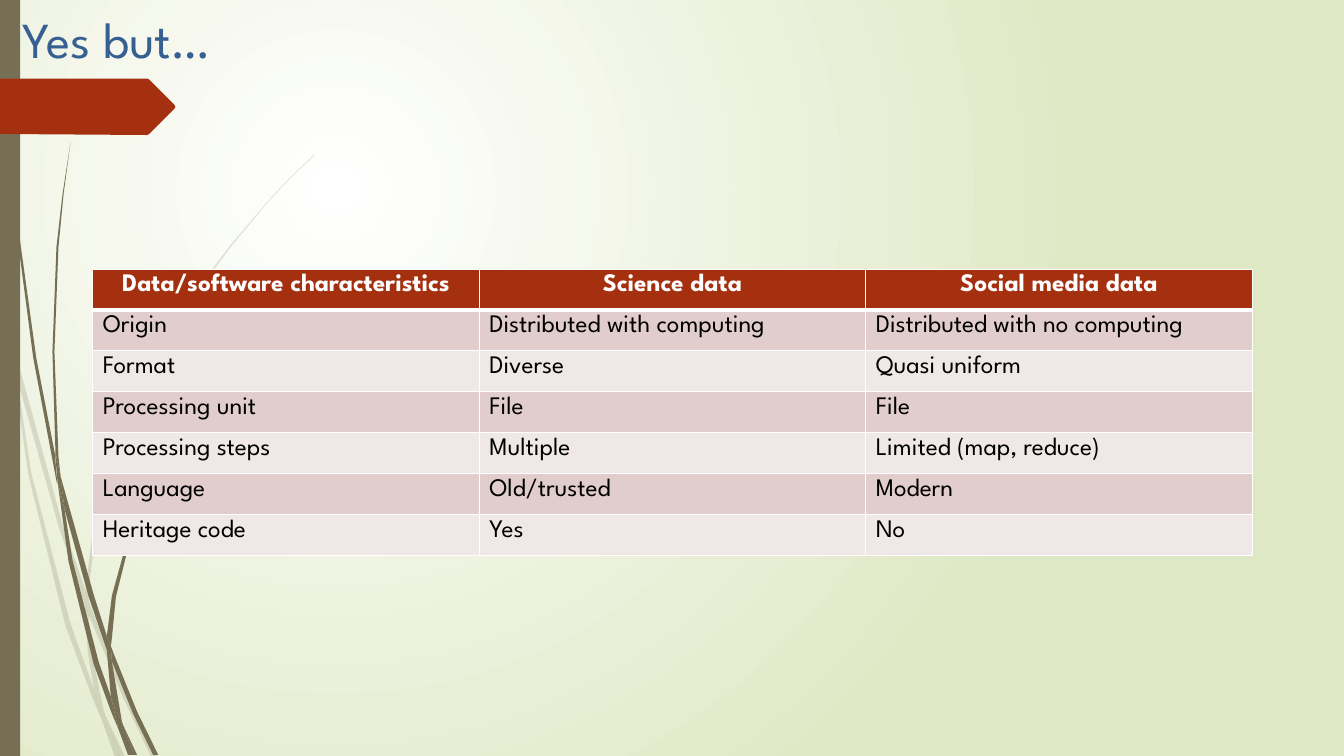
from lxml import etree
from pptx import Presentation
from pptx.dml.color import RGBColor
from pptx.enum.shapes import MSO_SHAPE
from pptx.enum.text import MSO_ANCHOR, PP_ALIGN
from pptx.oxml.ns import qn
from pptx.util import Inches, Pt

RECTANGLE = MSO_SHAPE.RECTANGLE
LEFT, CENTER = PP_ALIGN.LEFT, PP_ALIGN.CENTER
TOP, MIDDLE = MSO_ANCHOR.TOP, MSO_ANCHOR.MIDDLE

WHITE = RGBColor(0xFF, 0xFF, 0xFF)
BLACK = RGBColor(0x00, 0x00, 0x00)
PALE_GREEN = RGBColor(0xDF, 0xE8, 0xC4)
OLIVE = RGBColor(0x76, 0x6F, 0x54)
RUST = RGBColor(0xA5, 0x30, 0x10)
BLUE = RGBColor(0x37, 0x60, 0x92)
ROW_DARK = RGBColor(0xE1, 0xCD, 0xCC)
ROW_LIGHT = RGBColor(0xF0, 0xE8, 0xE7)

# Outlines of the grass blades, in inches
FAINT_BLADES = [
    [(0.11, 3.5), (0.09, 3.22), (0, 2.82), (0, 2.99), (0.1, 3.44)],
    [(0.58, 5.22), (0.84, 5.99), (0.85, 5.86), (0.62, 5.2), (0.14, 3.45),
     (0.17, 3.76)],
    [(0.92, 6.07), (0.88, 5.96), (0.88, 6.1), (1.23, 6.94), (1.5, 7.51),
     (1.55, 7.51), (1.27, 6.92)],
    [(1.19, 7.51), (1.24, 7.51), (1.05, 7.11)],
    [(0.93, 6.83), (0.7, 6.19), (0.31, 4.69), (0.17, 3.76), (0.11, 3.5),
     (0.28, 4.7), (0.65, 6.21), (0.92, 6.93), (1.01, 7.14), (0.99, 7.07)],
    [(0.84, 5.99), (0.87, 6.46), (0.93, 6.83), (0.96, 6.92), (1.05, 7.11),
     (1.03, 7.06), (0.91, 6.46), (0.88, 6.1), (0.88, 6.08)],
    [(0.88, 5.84), (0.96, 5.2), (1.1, 4.62), (1.33, 4.03), (1.6, 3.49),
     (1.92, 2.95), (2.29, 2.45), (2.68, 1.98), (2.9, 1.75), (3.12, 1.54),
     (3.12, 1.53), (2.89, 1.75), (2.68, 1.97), (2.28, 2.44), (1.9, 2.94),
     (1.58, 3.48), (1.3, 4.02), (1.07, 4.61), (0.93, 5.2), (0.85, 5.84),
     (0.85, 5.86), (0.88, 5.96)],
    [(1.01, 7.14), (1.14, 7.51), (1.19, 7.51)],
    [(0.88, 6.08), (0.88, 6.1), (0.88, 5.96), (0.85, 5.86), (0.84, 5.99)],
    [(0.96, 6.92), (0.93, 6.83), (0.99, 7.07), (1.01, 7.14), (1.19, 7.51),
     (1.05, 7.11)],
]
SOLID_BLADES = [
    [(0.07, 1.1), (0.17, 2.33), (0.33, 3.55), (0.56, 4.77), (0.57, 4.81),
     (0.55, 4.57), (0.55, 4.53), (0.36, 3.55), (0.19, 2.32), (0.08, 1.09),
     (0.05, 0.48), (0.04, 0), (0.03, 0), (0.04, 0.48)],
    [(0.88, 5.92), (1.06, 6.45), (1.06, 6.33), (1.06, 6.31), (0.93, 5.9),
     (0.6, 4.72), (0.64, 5.05)],
    [(1.13, 6.49), (1.1, 6.41), (1.11, 6.56), (1.32, 7.08), (1.52, 7.49),
     (1.57, 7.49), (1.36, 7.06)],
    [(1.1, 6.91), (0.98, 6.57), (0.72, 5.56), (0.64, 5.05), (0.57, 4.77),
     (0.68, 5.57), (0.93, 6.59), (1.11, 7.08), (1.17, 7.22), (1.16, 7.17)],
    [(0.6, 4.72), (0.58, 4.53), (0.54, 3.49), (0.58, 2.45), (0.63, 1.93),
     (0.7, 1.41), (0.62, 1.93), (0.56, 2.45), (0.52, 3.49), (0.55, 4.49)],
    [(1.33, 7.49), (1.36, 7.49), (1.22, 7.19)],
    [(0.57, 4.77), (0.64, 5.05), (0.6, 4.72), (0.55, 4.49), (0.55, 4.53)],
    [(1.11, 6.33), (1.15, 5.92), (1.25, 5.52), (1.4, 5.13), (1.58, 4.76),
     (1.8, 4.4), (2.05, 4.06), (2.31, 3.74), (2.45, 3.59), (2.61, 3.44),
     (2.6, 3.44), (2.45, 3.58), (2.31, 3.73), (2.04, 4.05), (1.78, 4.39),
     (1.56, 4.74), (1.37, 5.12), (1.22, 5.51), (1.11, 5.91), (1.06, 6.31),
     (1.1, 6.41)],
    [(1.17, 7.22), (1.27, 7.49), (1.31, 7.49)],
    [(1.06, 6.45), (1.1, 6.91), (1.16, 7.06), (1.22, 7.19), (1.21, 7.16),
     (1.11, 6.56), (1.09, 6.51)],
    [(1.06, 6.45), (1.09, 6.51), (1.11, 6.56), (1.1, 6.41), (1.06, 6.31),
     (1.06, 6.33)],
    [(1.16, 7.06), (1.1, 6.91), (1.16, 7.17), (1.17, 7.22), (1.3, 7.49),
     (1.33, 7.49), (1.22, 7.19)],
]
ARROW_TAB = [(0, 0.78), (1.46, 0.78), (1.48, 0.79), (1.73, 1.04),
             (1.74, 1.06), (1.73, 1.08), (1.48, 1.33), (1.46, 1.34), (0, 1.33)]

COMPARISON = [
    ("Data/software characteristics", "Science data", "Social media data"),
    ("Origin", "Distributed with computing", "Distributed with no computing"),
    ("Format", "Diverse", "Quasi uniform"),
    ("Processing unit", "File", "File"),
    ("Processing steps", "Multiple", "Limited (map, reduce)"),
    ("Language", "Old/trusted", "Modern"),
    ("Heritage code", "Yes", "No"),
]


class SlideBuilder:
    font_name = "League Spartan"

    def __init__(self, presentation):
        self.slide = presentation.slides.add_slide(presentation.slide_layouts[5])

    def radial_background(self, inner, outer):
        fill = self.slide.background.fill
        fill.gradient()
        for stop, color in zip(fill.gradient_stops, (inner, outer)):
            stop.color.rgb = color
        gradient = self.slide.element.find(".//" + qn("a:gradFill"))
        gradient.remove(gradient.find(qn("a:lin")))
        circle = etree.SubElement(gradient, qn("a:path"), path="circle")
        etree.SubElement(circle, qn("a:fillToRect"),
                         l="50000", t="50000", r="100000", b="100000")

    def paint(self, shape, color, opacity=100):
        shape.shadow.inherit = False
        shape.line.fill.background()
        shape.fill.solid()
        shape.fill.fore_color.rgb = color
        if opacity < 100:
            color_element = shape.element.spPr.find(".//" + qn("a:srgbClr"))
            etree.SubElement(color_element, qn("a:alpha"), val=str(opacity * 1000))

    def outline(self, shapes, points, color, opacity=100):
        corners = [(Inches(x), Inches(y)) for x, y in points]
        builder = shapes.build_freeform(*corners[0])
        builder.add_line_segments(corners[1:])
        self.paint(builder.convert_to_shape(), color, opacity)

    def blades(self, outlines, opacity):
        group = self.slide.shapes.add_group_shape()
        for points in outlines:
            self.outline(group.shapes, points, OLIVE, opacity)

    def bar(self, left, top, width, height, color):
        shape = self.slide.shapes.add_shape(
            RECTANGLE, Inches(left), Inches(top), Inches(width), Inches(height))
        self.paint(shape, color)

    def format_paragraph(self, paragraph, size, color, alignment, bold=False):
        paragraph.alignment = alignment
        for run in paragraph.runs:
            run.font.name = self.font_name
            run.font.size = Pt(size)
            run.font.bold = bold
            run.font.color.rgb = color

    def title(self, text):
        title = self.slide.shapes.title
        title.left, title.top = Inches(0), Inches(0.02)
        title.width, title.height = Inches(11.5), Inches(0.8)
        frame = title.text_frame
        frame.text = text
        frame.margin_left = Inches(0.22)
        frame.vertical_anchor = MIDDLE
        frame.paragraphs[0].line_spacing = 0.9
        self.format_paragraph(frame.paragraphs[0], 36, BLUE, LEFT)

    def cell_borders(self, cell, bottom_width):
        properties = cell._tc.get_or_add_tcPr()
        for side, width in zip("LRTB", (1, 1, 1, bottom_width)):
            line = etree.SubElement(properties, qn("a:ln" + side), w=str(Pt(width)))
            fill = etree.SubElement(line, qn("a:solidFill"))
            etree.SubElement(fill, qn("a:srgbClr"), val=str(WHITE))

    def table(self, rows, left, top, width, height):
        table = self.slide.shapes.add_table(
            len(rows), len(rows[0]), Inches(left), Inches(top),
            Inches(width), Inches(height)).table
        for row_index, row in enumerate(rows):
            header = row_index == 0
            row_fill = RUST if header else (ROW_LIGHT, ROW_DARK)[row_index % 2]
            for column_index, text in enumerate(row):
                cell = table.cell(row_index, column_index)
                cell.text_frame.text = text
                cell.vertical_anchor = TOP
                self.format_paragraph(
                    cell.text_frame.paragraphs[0], 18, WHITE if header else BLACK,
                    CENTER if header else LEFT, header)
                self.cell_borders(cell, 3 if header else 1)
                cell.fill.solid()
                cell.fill.fore_color.rgb = row_fill


def main():
    presentation = Presentation()
    presentation.slide_width = Inches(13.33)
    presentation.slide_height = Inches(7.5)
    builder = SlideBuilder(presentation)
    builder.radial_background(WHITE, PALE_GREEN)
    builder.blades(FAINT_BLADES, 20)
    builder.blades(SOLID_BLADES, 100)
    builder.bar(0, 0, 0.2, 7.5, OLIVE)
    builder.outline(builder.slide.shapes, ARROW_TAB, RUST)
    builder.table(COMPARISON, 0.92, 2.67, 11.5, 2.84)
    builder.title("Yes but…")
    presentation.save("out.pptx")


if __name__ == "__main__":
    main()
